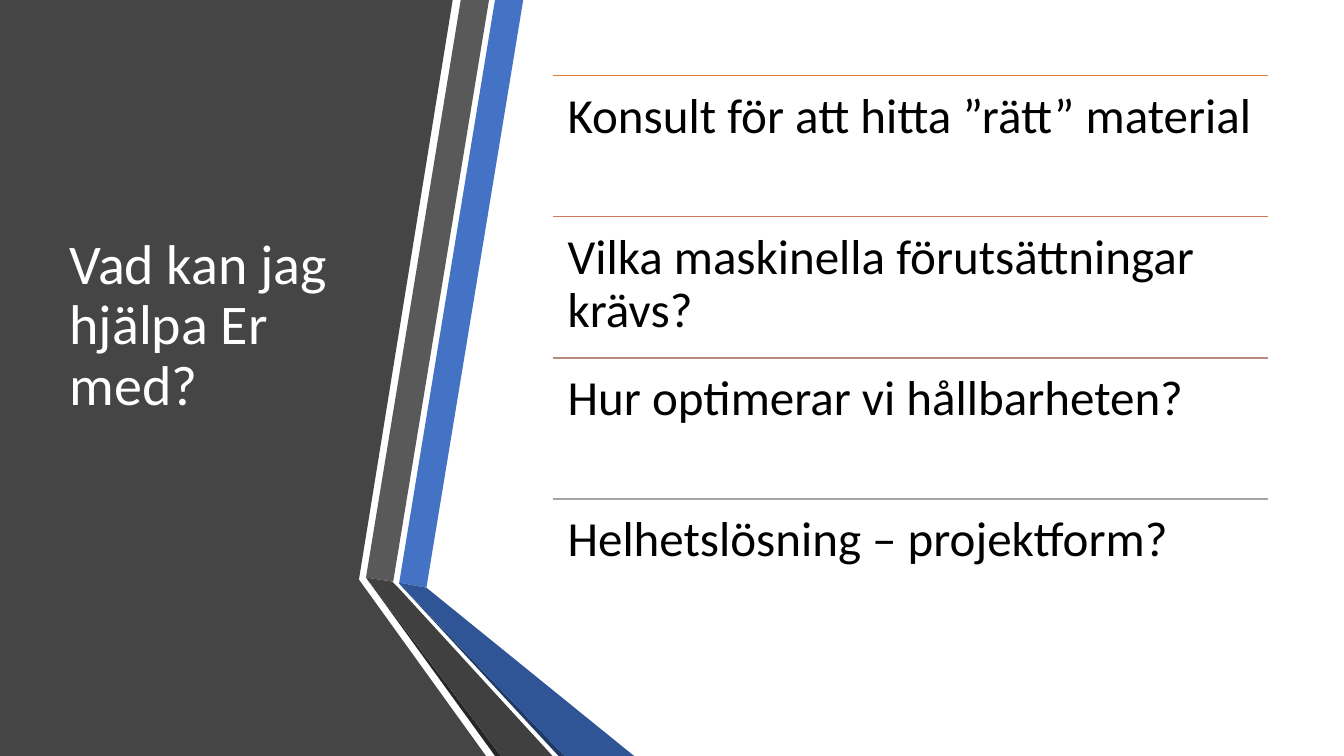
from dataclasses import dataclass

from lxml import etree
from pptx import Presentation
from pptx.dml.color import RGBColor
from pptx.enum.shapes import MSO_CONNECTOR
from pptx.enum.text import MSO_ANCHOR, MSO_AUTO_SIZE, PP_ALIGN
from pptx.oxml.ns import qn
from pptx.util import Inches, Pt

STRAIGHT = MSO_CONNECTOR.STRAIGHT
TOP, MIDDLE = MSO_ANCHOR.TOP, MSO_ANCHOR.MIDDLE
LEFT = PP_ALIGN.LEFT
NO_FIT = MSO_AUTO_SIZE.NONE


@dataclass(frozen=True)
class Theme:
    font: str = "Calibri"
    title_size: int = 40
    offer_size: int = 35
    rule_width: int = 1
    title: str = "FFFFFF"
    text: str = "000000"
    panel: str = "454545"
    blue: str = "4472C4"
    blue_fold: str = "2F5597"
    blue_edge: str = "203864"
    grey: str = "595959"
    grey_fold: str = "404040"
    grey_edge: str = "262626"


THEME = Theme()

PANEL = [(0, 0), (3.53, 0), (4.49, 0), (3.56, 5.75), (4.82, 7.5), (0, 7.5)]
BANDS = [
    (THEME.blue, [(3.96, 5.78), (4.23, 5.83), (5.19, 0), (4.91, 0)]),
    (THEME.grey, [(4.85, 0), (4.57, 0), (3.63, 5.73), (3.9, 5.77)]),
    (THEME.grey_edge, [(3.63, 5.73), (4.91, 7.5), (4.97, 7.5)]),
    (THEME.blue_edge, [(3.96, 5.79), (5.54, 7.5), (5.6, 7.5)]),
    (THEME.blue_fold, [(3.96, 5.79), (5.6, 7.5), (6.29, 7.5), (4.23, 5.83), (3.96, 5.78)]),
    (THEME.grey_fold, [(5.48, 7.5), (3.95, 5.83), (3.89, 5.77), (3.63, 5.73), (4.97, 7.5)]),
]

TITLE = "Vad kan jag hjälpa Er med?"
OFFERS = [
    ("ED7D31", "Konsult för att hitta ”rätt” material"),
    ("D17B5C", "Vilka maskinella förutsättningar krävs?"),
    ("B98A82", "Hur optimerar vi hållbarheten?"),
    ("A5A5A5", "Helhetslösning – projektform?"),
]
OFFER_LEFT, OFFER_TOP = 5.48, 0.75
OFFER_WIDTH, OFFER_HEIGHT = 7.1, 1.4
OFFER_INSET = Inches(0.15)


def apply(target, formats):
    """Set every format value on the target."""
    for name, value in formats.items():
        setattr(target, name, value)


def add_polygon(shapes, points, color):
    """Draw a closed, filled outline from points in inches."""
    start, *rest = [(Inches(x), Inches(y)) for x, y in points]
    builder = shapes.build_freeform(*start)
    builder.add_line_segments(rest, close=True)
    polygon = builder.convert_to_shape()
    polygon.shadow.inherit = False
    polygon.fill.solid()
    polygon.fill.fore_color.rgb = RGBColor.from_string(color)
    polygon.line.fill.background()


def add_rule(shapes, top, color):
    """Draw the thin line above an offer."""
    rule = shapes.add_connector(
        STRAIGHT, Inches(OFFER_LEFT), Inches(top),
        Inches(OFFER_LEFT + OFFER_WIDTH), Inches(top))
    rule.line.color.rgb = RGBColor.from_string(color)
    rule.line.width = Pt(THEME.rule_width)
    etree.SubElement(rule._element.spPr, qn("a:effectLst"))


def write_text(frame, text, size, color, formats):
    """Fill a text frame with one left-aligned paragraph."""
    apply(frame, {"word_wrap": True, "auto_size": NO_FIT, **formats})
    paragraph = frame.paragraphs[0]
    apply(paragraph, {"alignment": LEFT, "line_spacing": 0.9})
    run = paragraph.add_run()
    run.text = text
    apply(run.font, {"name": THEME.font, "size": Pt(size)})
    run.font.color.rgb = RGBColor.from_string(color)


def add_offer(shapes, top, color, text):
    """Place one offer with its rule."""
    add_rule(shapes, top, color)
    offer = shapes.add_textbox(
        Inches(OFFER_LEFT), Inches(top), Inches(OFFER_WIDTH), Inches(OFFER_HEIGHT))
    insets = {f"margin_{side}": OFFER_INSET for side in ("left", "top", "right", "bottom")}
    write_text(offer.text_frame, text, THEME.offer_size, THEME.text,
               {"vertical_anchor": TOP, **insets})


def place_title(slide):
    """Move the title in front of the panel and format it."""
    title = slide.shapes.title
    title._element.getparent().append(title._element)
    apply(title, {"left": Inches(0.59), "top": Inches(0.75),
                  "width": Inches(3.04), "height": Inches(5.58)})
    write_text(title.text_frame, TITLE, THEME.title_size, THEME.title,
               {"vertical_anchor": MIDDLE, "margin_left": Inches(0.1),
                "margin_right": Inches(0.1), "margin_top": Inches(0.05),
                "margin_bottom": Inches(0.65)})


def main():
    """Build and save the slide."""
    deck = Presentation()
    apply(deck, {"slide_width": Inches(13.33), "slide_height": Inches(7.5)})
    slide = deck.slides.add_slide(deck.slide_layouts[5])
    add_polygon(slide.shapes, PANEL, THEME.panel)
    bands = slide.shapes.add_group_shape()
    for color, points in BANDS:
        add_polygon(bands.shapes, points, color)
    place_title(slide)
    offers = slide.shapes.add_group_shape()
    for row, (color, text) in enumerate(OFFERS):
        add_offer(offers.shapes, OFFER_TOP + row * OFFER_HEIGHT, color, text)
    deck.save("out.pptx")


if __name__ == "__main__":
    main()
